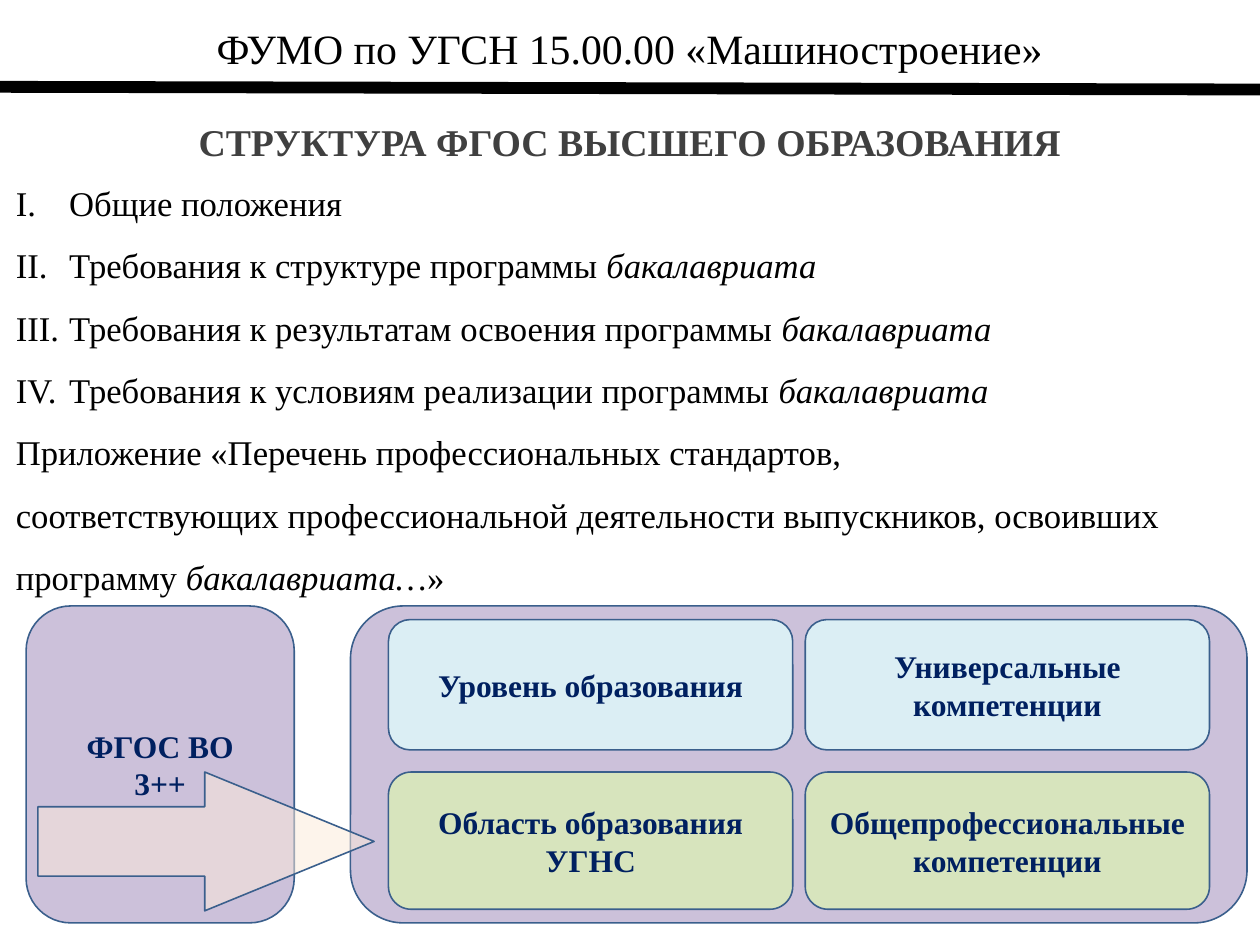
from lxml import etree
from pptx import Presentation
from pptx.dml import color
from pptx.enum import shapes, text
from pptx.oxml import ns
from pptx.util import Cm, Pt

FONT = "Times New Roman"
BLACK, GREY, NAVY, OUTLINE = "000000", "404040", "002060", "3A5F8C"
LILAC, BLUE, GREEN, PEACH = "CCC1DA", "DBEEF4", "D7E4BD", "FDEADA"
SLIDE_W, SLIDE_H = 56.44, 42.34
LEVEL = "бакалавриата"
SECTIONS = [
    ("Общие положения", ""),
    ("Требования к структуре программы ", LEVEL),
    ("Требования к результатам освоения программы ", LEVEL),
    ("Требования к условиям реализации программы ", LEVEL),
]
APPENDIX = [
    ("Приложение «Перечень профессиональных стандартов,",),
    ("соответствующих профессиональной деятельности выпускников, "
     "освоивших программу ", LEVEL + "…", "»"),
]
COLUMNS = [17.4, 36.07]
ROWS = [
    (27.76, 5.84, BLUE, ["Уровень образования", "Универсальные компетенции"]),
    (34.59, 6.15, GREEN, ["Область образования\nУГНС",
                          "Общепрофессиональные компетенции"]),
]


def rgb(value):
    return color.RGBColor.from_string(value)


def style(r, size, ink, bold=False, italic=False):
    r.font.name = FONT
    r.font.size = Pt(size)
    r.font.color.rgb = rgb(ink)
    r.font.bold = bold
    r.font.italic = italic


def fill_centred(tf, words, size, ink, bold):
    tf.word_wrap = True
    tf.margin_left = tf.margin_right = Cm(0.55)
    tf.margin_top = tf.margin_bottom = Cm(0.28)
    tf.text = words
    for p in tf.paragraphs:
        p.alignment = text.PP_ALIGN.CENTER
        for r in p.runs:
            style(r, size, ink, bold)


def add_heading(s, top, height, words, size, ink, bold=False):
    sp = s.shapes.add_textbox(0, Cm(top), Cm(SLIDE_W), Cm(height))
    fill_centred(sp.text_frame, words, size, ink, bold)
    sp.text_frame.vertical_anchor = text.MSO_ANCHOR.MIDDLE


def add_rule(s, y1, y2):
    line = s.shapes.add_connector(
        shapes.MSO_CONNECTOR.STRAIGHT, 0, Cm(y1), Cm(SLIDE_W), Cm(y2))
    line.line.color.rgb = rgb(BLACK)
    line.line.width = Pt(15)
    etree.SubElement(line._element.spPr, ns.qn("a:effectLst"))


def number_roman(p):
    pPr = p._p.get_or_add_pPr()
    pPr.set("marL", str(Cm(2.39)))
    pPr.set("indent", str(-Cm(2.39)))
    etree.SubElement(pPr, ns.qn("a:buFont"), typeface="+mj-lt")
    etree.SubElement(pPr, ns.qn("a:buAutoNum"), type="romanUcPeriod")


def add_sections(s):
    tf = s.shapes.add_textbox(Cm(0.46), Cm(7.09), Cm(55.5), Cm(20.02)).text_frame
    tf.word_wrap = True
    for i, parts in enumerate(SECTIONS + APPENDIX):
        p = tf.add_paragraph() if i else tf.paragraphs[0]
        if i < len(SECTIONS):
            number_roman(p)
        p.line_spacing = 1.5
        for j, part in enumerate(parts):
            if part:
                r = p.add_run()
                r.text = part
                style(r, 44, BLACK, italic=j == 1)


def add_block(s, kind, left, top, width, height, fill, words=""):
    sp = s.shapes.add_shape(kind, Cm(left), Cm(top), Cm(width), Cm(height))
    sp.shadow.inherit = False
    sp.fill.solid()
    sp.fill.fore_color.rgb = rgb(fill)
    sp.line.color.rgb = rgb(OUTLINE)
    sp.line.width = Pt(2)
    if words:
        fill_centred(sp.text_frame, words, 40, NAVY, True)
        sp.text_frame.vertical_anchor = text.MSO_ANCHOR.MIDDLE
    return sp


def add_arrow(s):
    sp = add_block(s, shapes.MSO_SHAPE.RIGHT_ARROW, 1.7, 34.59, 15.06, 6.22, PEACH)
    sp.adjustments[0] = 0.5
    sp.adjustments[1] = 1.22
    tint = sp._element.spPr.find(ns.qn("a:solidFill"))[0]
    etree.SubElement(tint, ns.qn("a:alpha"), val="52000")


def main():
    prs = Presentation()
    prs.slide_width, prs.slide_height = Cm(SLIDE_W), Cm(SLIDE_H)
    s = prs.slides.add_slide(prs.slide_layouts[6])
    add_heading(s, 4.55, 3.58, "СТРУКТУРА ФГОС ВЫСШЕГО ОБРАЗОВАНИЯ", 48, GREY, True)
    add_heading(s, 0.71, 2.84, "ФУМО по УГСН 15.00.00 «Машиностроение»", 53, BLACK)
    add_rule(s, 3.89, 4.01)
    add_sections(s)
    rounded = shapes.MSO_SHAPE.ROUNDED_RECTANGLE
    add_block(s, rounded, 15.7, 27.15, 40.16, 14.2, LILAC)
    for top, height, fill, labels in ROWS:
        for left, label in zip(COLUMNS, labels):
            add_block(s, rounded, left, top, 18.11, height, fill, label)
    add_block(s, rounded, 1.17, 27.15, 12.01, 14.2, LILAC, "ФГОС ВО\n3++")
    add_arrow(s)
    prs.save("out.pptx")


if __name__ == "__main__":
    main()
